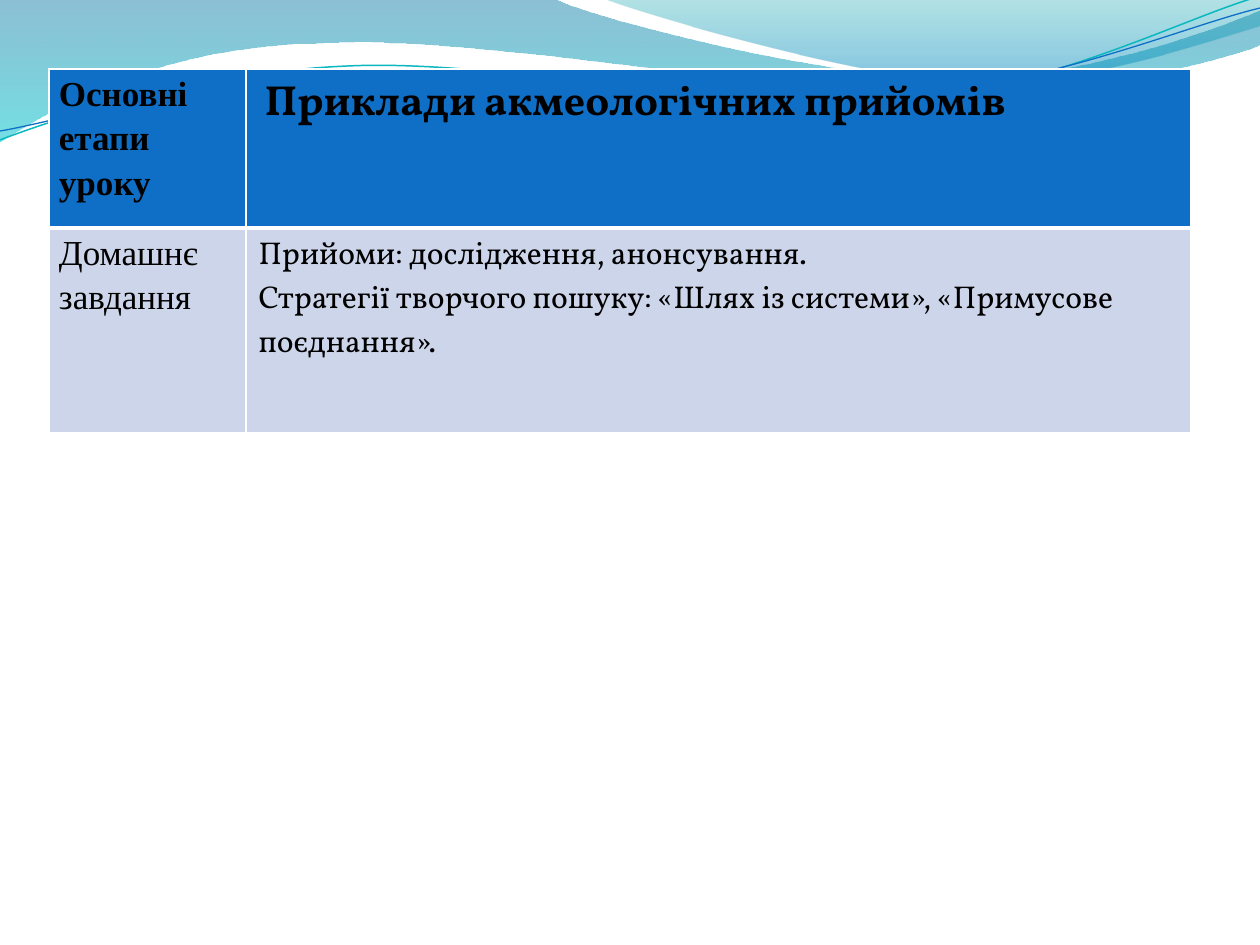
import math
from lxml import etree
from pptx import Presentation
from pptx import util as u
from pptx.dml.color import RGBColor
from pptx.oxml.ns import qn

SCALE = 914400 / 126
WHITE = RGBColor(0xFF, 0xFF, 0xFF)
BLACK = RGBColor(0x00, 0x00, 0x00)
BLUE = RGBColor(0x0F, 0x6F, 0xC6)
PALE = RGBColor(0xCC, 0xD5, 0xEA)
TEAL = RGBColor(0x0A, 0xB8, 0xBF)
DEEP = RGBColor(0x00, 0x74, 0xA1)
CYAN = RGBColor(0x00, 0xC6, 0xCF)
GREEN = RGBColor(0x00, 0xA1, 0xA9)
SKY = RGBColor(0x00, 0x8B, 0xBF)
SERIF = "Times New Roman"
BOOK = "Vollkorn"
TILT = -2.7

BAND = [(0, 0), (554, -1), (600, 21, 837, 79, 955, 79),
        (1075, 79, 1207, 33, 1260, 11), (1261, 45),
        (1239, 55, 1096, 96, 940, 95), (784, 95, 481, 35, 324, 43),
        (163, 45, 58, 105, -1, 142)]
CREST = [(604, -1), (641, 14, 859, 78, 969, 82),
         (1079, 87, 1211, 40, 1260, 26), (1260, 0)]
UPPER = [(0, 140), (60, 117, 199, 72, 349, 66),
         (498, 59, 747, 112, 898, 101), (1050, 89, 1182, 19, 1257, -3)]
LOWER = [(0, 131), (59, 121, 207, 77, 357, 71),
         (508, 64, 752, 106, 903, 95), (1053, 84, 1185, 26, 1260, 8)]


def px(n):
    return u.Emu(round(n * SCALE))


def pairs(seg):
    return list(zip(seg[::2], seg[1::2]))


def spin(seg, mid, angle):
    cos, sin = math.cos(math.radians(angle)), math.sin(math.radians(angle))
    turned = []
    for x, y in pairs(seg):
        dx, dy = x - mid[0], y - mid[1]
        turned += [mid[0] + dx * cos - dy * sin, mid[1] + dx * sin + dy * cos]
    return tuple(turned)


def add_path(slide, segs, closed):
    ends = [(px(seg[-2]), px(seg[-1])) for seg in segs]
    build = slide.shapes.build_freeform(*ends[0], scale=1.0)
    build.add_line_segments(ends[1:], close=closed)
    shape = build.convert_to_shape()
    shape.shadow.inherit = False
    lines = list(shape._element.iter(qn("a:lnTo")))
    for line, seg in zip(lines, segs[1:]):
        if len(seg) == 6:
            bend = etree.Element(qn("a:cubicBezTo"))
            for x, y in pairs(seg):
                etree.SubElement(bend, qn("a:pt"), x=str(px(x) - shape.left),
                                 y=str(px(y) - shape.top))
            line.getparent().replace(line, bend)
    return shape


def add_wave(slide, segs, stops):
    shape = add_path(slide, segs, True)
    shape.line.fill.background()
    shape.fill.gradient()
    shape.fill.gradient_angle = 270
    for stop, (place, color, alpha) in zip(shape.fill.gradient_stops, stops):
        stop.position = place
        stop.color.rgb = color
    marks = shape.fill._xPr.iter(qn("a:srgbClr"))
    for mark, (place, color, alpha) in zip(marks, stops):
        etree.SubElement(mark, qn("a:alpha"), val=str(alpha * 1000))


def add_curve(slide, segs, mid, color, width):
    shape = add_path(slide, [spin(seg, mid, -TILT) for seg in segs], False)
    shape.rotation = TILT
    shape.fill.background()
    shape.line.color.rgb = color
    shape.line.width = u.Pt(width)


def put_text(para, words, size=18, font=BOOK, bold=False, color=BLACK):
    run = para.add_run()
    run.text = words
    run.font.size = u.Pt(size)
    run.font.name = font
    run.font.bold = bold
    run.font.color.rgb = color


def set_edge(cell, side, width):
    props = cell._tc.get_or_add_tcPr()
    line = etree.SubElement(props, qn("a:ln" + side), w=str(u.Pt(width)))
    fill = etree.SubElement(line, qn("a:solidFill"))
    etree.SubElement(fill, qn("a:srgbClr"), val=str(WHITE))


def style_cell(cell, fill, top, base):
    for side, width in zip("LRTB", (1, 1, top, base)):
        set_edge(cell, side, width)
    cell.fill.solid()
    cell.fill.fore_color.rgb = fill


def fill_label(cell, words, bold):
    cell.margin_left = cell.margin_right = px(10)
    cell.margin_top = cell.margin_bottom = 0
    para = cell.text_frame.paragraphs[0]
    para.line_spacing = 1.15
    para.space_after = u.Pt(10)
    put_text(para, words, size=20, font=SERIF, bold=bold)


def add_plan(slide):
    table = slide.shapes.add_table(2, 2, px(49), px(69), px(1142), px(364)).table
    for col, width in zip(table.columns, (197, 945)):
        col.width = px(width)
    for row, height in zip(table.rows, (159, 205)):
        row.height = px(height)
    for r, look in enumerate(((BLUE, 1, 3), (PALE, 3, 1))):
        for c in range(2):
            style_cell(table.cell(r, c), *look)

    fill_label(table.cell(0, 0), "Основні етапи уроку", True)
    fill_label(table.cell(1, 0), "Домашнє завдання", False)
    head = table.cell(0, 1).text_frame.paragraphs[0]
    put_text(head, " ", bold=True, color=WHITE)
    put_text(head, "Приклади акмеологічних прийомів", size=24, bold=True)
    body = table.cell(1, 1).text_frame
    put_text(body.paragraphs[0], "Прийоми: дослідження, анонсування.")
    put_text(body.add_paragraph(), "Стратегії творчого пошуку: "
             "«Шлях із системи», «Примусове поєднання».")


def main():
    deck = Presentation()
    deck.slide_width, deck.slide_height = px(1260), px(945)
    slide = deck.slides.add_slide(deck.slide_layouts[6])
    add_wave(slide, BAND, [(0, DEEP, 45), (1, CYAN, 55)])
    add_wave(slide, CREST, [(0, GREEN, 30), (0.8, SKY, 45)])
    add_curve(slide, UPPER, (629, 72), TEAL, 0.85)
    add_curve(slide, LOWER, (629, 74), BLUE, 0.75)
    add_plan(slide)
    deck.save("out.pptx")


if __name__ == "__main__":
    main()
